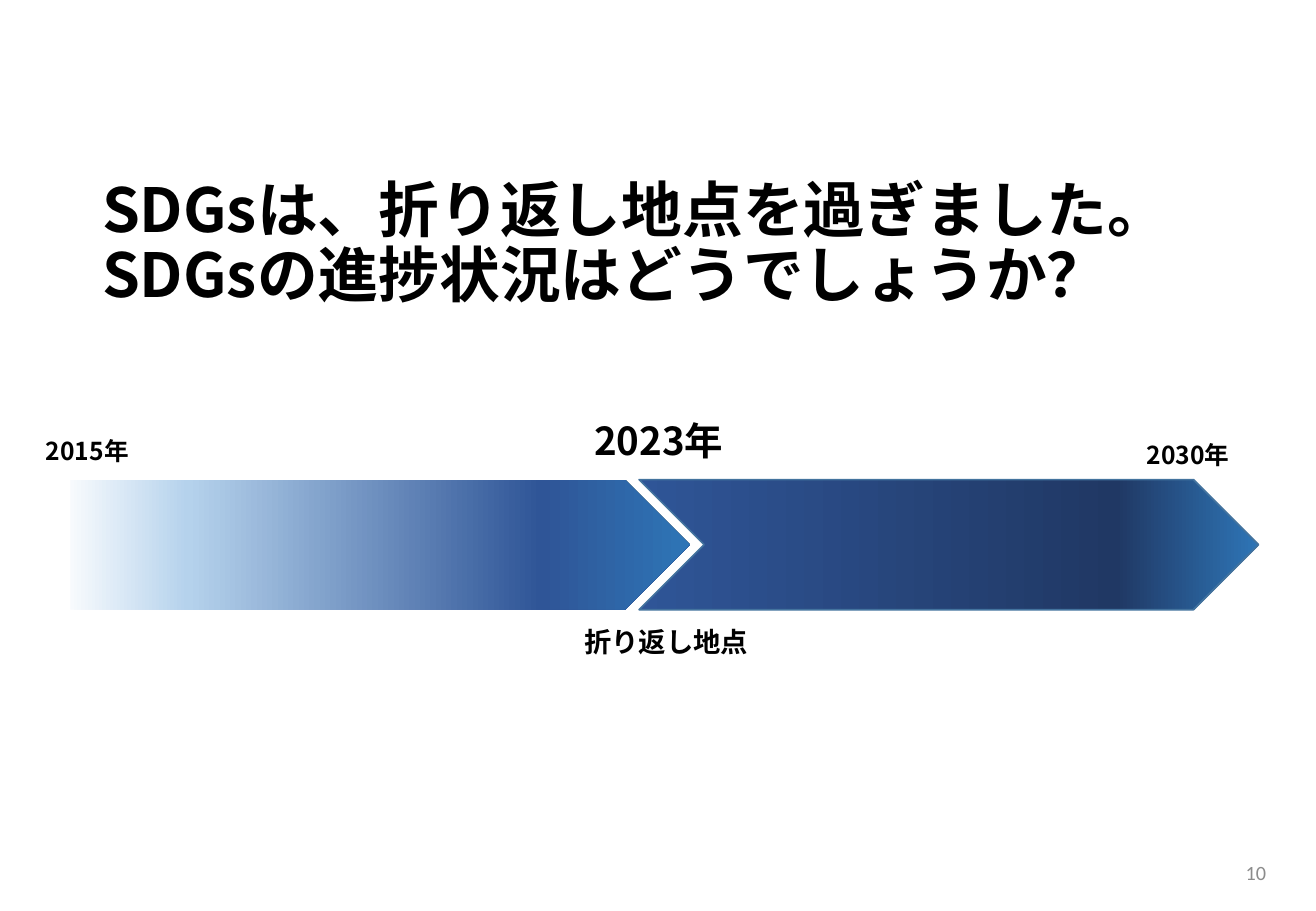
from dataclasses import dataclass

from lxml import etree
from pptx import Presentation
from pptx.dml.color import RGBColor
from pptx.enum.shapes import MSO_SHAPE
from pptx.enum.text import MSO_ANCHOR, MSO_AUTO_SIZE, PP_ALIGN
from pptx.oxml.ns import qn
from pptx.util import Cm, Pt

PENTAGON, CHEVRON = MSO_SHAPE.PENTAGON, MSO_SHAPE.CHEVRON
TOP, MIDDLE = MSO_ANCHOR.TOP, MSO_ANCHOR.MIDDLE
LEFT, RIGHT = PP_ALIGN.LEFT, PP_ALIGN.RIGHT


@dataclass(frozen=True)
class Theme:
    font: str = "Noto Sans CJK JP"
    number_font: str = "Calibri"
    ink: str = "000000"
    muted: str = "8C8C8C"
    outline: str = "43739E"
    title: float = 36
    year: float = 14.6
    current_year: float = 22.8
    caption: float = 16.2
    number: float = 12


THEME = Theme()

# Lengths in cm; boxes are left, top, width, height
SLIDE_SIZE = (27.51, 19.05)
TITLE = "SDGsは、折り返し地点を過ぎました。\vSDGsの進捗状況はどうでしょうか？"
TITLE_BOX = (1.88, 3.63, 23.72, 3.0)

ARROW_LEFT, ARROW_TOP, ARROW_STEP = 1.47, 10.03, 11.89
ARROW_SIZE = (12.95, 2.72)
ARROWS = [  # shape, gradient stops (percent, colour), outline
    (PENTAGON, [(0, "F7FAFD"), (19, "B5D2EC"), (76, "2F5597"), (100, "2E75B6")], None),
    (CHEVRON, [(0, "2F5597"), (77, "203864"), (100, "2E75B6")], THEME.outline),
]

LABELS = [  # text, box, size
    ("2015年", (0.71, 8.99, 3.99, 0.89), THEME.year),
    ("2030年", (23.72, 9.07, 3.99, 0.89), THEME.year),
    ("2023年", (12.17, 8.59, 3.99, 1.22), THEME.current_year),
    ("折り返し地点", (11.96, 12.95, 4.93, 0.94), THEME.caption),
]
PAGE_NUMBER = "10"
NUMBER_BOX = (19.1, 17.73, 7.62, 1.02)


def cm(values):
    return [Cm(v) for v in values]


def write(s, text, *, size, font=THEME.font, color=THEME.ink, bold=True,
          align=LEFT, anchor=TOP, spacing=None):
    tf = s.text_frame
    tf.word_wrap = True
    tf.auto_size = MSO_AUTO_SIZE.NONE
    tf.vertical_anchor = anchor
    p = tf.paragraphs[0]
    p.text = text
    p.alignment = align
    p.line_spacing = spacing
    for r in p.runs:
        r.font.size, r.font.bold, r.font.name = Pt(size), bold, font
        r.font.color.rgb = RGBColor.from_string(color)
        etree.SubElement(r.font._element, qn("a:ea"), typeface=font)


def fill_gradient(s, stops):
    """Fill left to right with any number of stops."""
    s.fill.gradient()
    s.fill.gradient_angle = 0
    stop_list = s._element.spPr.find(qn("a:gradFill")).find(qn("a:gsLst"))
    for old in list(stop_list):
        stop_list.remove(old)
    for percent, color in stops:
        stop = etree.SubElement(stop_list, qn("a:gs"), pos=str(percent * 1000))
        etree.SubElement(stop, qn("a:srgbClr"), val=color)


def add_arrow(slide, index, kind, stops, outline):
    left = ARROW_LEFT + index * ARROW_STEP
    s = slide.shapes.add_shape(kind, *cm((left, ARROW_TOP, *ARROW_SIZE)))
    s.shadow.inherit = False
    fill_gradient(s, stops)
    if outline:
        s.line.color.rgb = RGBColor.from_string(outline)
        s.line.width = Pt(1)
    else:
        s.line.fill.background()


def main():
    prs = Presentation()
    prs.slide_width, prs.slide_height = cm(SLIDE_SIZE)
    slide = prs.slides.add_slide(prs.slide_layouts[5])

    title = slide.shapes.title
    title.left, title.top, title.width, title.height = cm(TITLE_BOX)
    write(title, TITLE, size=THEME.title, anchor=MIDDLE, spacing=0.9)

    for index, arrow in enumerate(ARROWS):
        add_arrow(slide, index, *arrow)

    for text, box, size in LABELS:
        write(slide.shapes.add_textbox(*cm(box)), text, size=size)

    write(slide.shapes.add_textbox(*cm(NUMBER_BOX)), PAGE_NUMBER, size=THEME.number,
          font=THEME.number_font, color=THEME.muted, bold=False,
          align=RIGHT, anchor=MIDDLE)

    prs.save("out.pptx")


if __name__ == "__main__":
    main()
